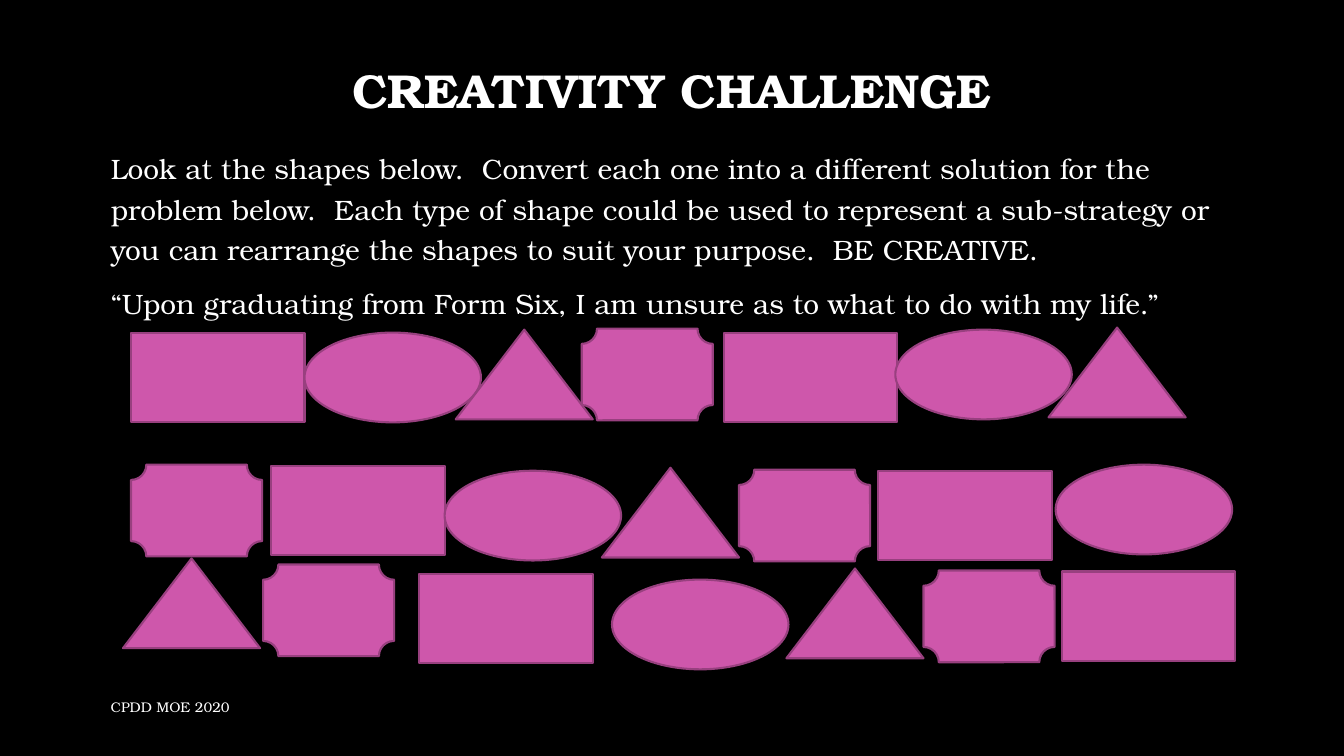
from itertools import cycle

from pptx import Presentation
from pptx import util as u
from pptx.dml.color import RGBColor
from pptx.enum import shapes, text

BLACK = RGBColor(0x00, 0x00, 0x00)
WHITE = RGBColor(0xFF, 0xFF, 0xFF)
PINK = RGBColor(0xCE, 0x57, 0xAB)
PLUM = RGBColor(0x98, 0x40, 0x7F)

# The four shapes repeat in this order along the rows: kind, width, height
KINDS = [
    (shapes.MSO_SHAPE.RECTANGLE, 1.72, 0.89),
    (shapes.MSO_SHAPE.OVAL, 1.75, 0.89),
    (shapes.MSO_SHAPE.ISOSCELES_TRIANGLE, 1.36, 0.89),
    (shapes.MSO_SHAPE.PLAQUE, 1.3, 0.91),
]

# Hand-scattered left and top of each shape, row by row
ROWS = [
    [(1.3, 3.3), (3.02, 3.3), (4.52, 3.27), (5.77, 3.26),
     (7.18, 3.3), (8.88, 3.27), (10.4, 3.25)],
    [(1.3, 4.61), (2.69, 4.62), (4.41, 4.67), (5.97, 4.64),
     (7.33, 4.66), (8.71, 4.67), (10.47, 4.61)],
    [(1.22, 5.54), (2.61, 5.6), (4.16, 5.69), (6.07, 5.75),
     (7.8, 5.64), (9.16, 5.66), (10.53, 5.67)],
]


class ChallengeSlide:
    font = "TeX Gyre Bonum"

    def __init__(self, deck):
        self.slide = deck.slides.add_slide(deck.slide_layouts[6])
        fill = self.slide.background.fill
        fill.solid()
        fill.fore_color.rgb = BLACK

    def add_text(self, lines, left, top, width, height, *, size, bold=False,
                 align=text.PP_ALIGN.LEFT, anchor=text.MSO_ANCHOR.MIDDLE,
                 spacing=1.0, before=0):
        box = self.slide.shapes.add_textbox(
            u.Inches(left), u.Inches(top), u.Inches(width), u.Inches(height))
        frame = box.text_frame
        frame.word_wrap = True
        frame.vertical_anchor = anchor
        frame.text = "\n".join(lines)
        for para in frame.paragraphs:
            para.alignment = align
            para.line_spacing = spacing
            para.space_before = u.Pt(before)
            for span in para.runs:
                span.font.name = self.font
                span.font.size = u.Pt(size)
                span.font.bold = bold
                span.font.color.rgb = WHITE

    def add_figure(self, kind, left, top, width, height):
        figure = self.slide.shapes.add_shape(
            kind, u.Inches(left), u.Inches(top), u.Inches(width), u.Inches(height))
        figure.shadow.inherit = False
        figure.fill.solid()
        figure.fill.fore_color.rgb = PINK
        figure.line.color.rgb = PLUM
        figure.line.width = u.Pt(1.5)


def main():
    deck = Presentation()
    deck.slide_width = u.Inches(13.33)
    deck.slide_height = u.Inches(7.5)
    page = ChallengeSlide(deck)

    # Title, task and footer
    page.add_text(["CREATIVITY CHALLENGE"], 1, 0.44, 11.32, 0.96, size=34,
                  bold=True, align=text.PP_ALIGN.CENTER, spacing=0.9)
    page.add_text(
        ["Look at the shapes below.  Convert each one into a different solution "
         "for the problem below.  Each type of shape could be used to represent "
         "a sub-strategy or you can rearrange the shapes to suit your purpose.  "
         "BE CREATIVE.",
         "“Upon graduating from Form Six, I am unsure as to what to do with my life.”"],
        1, 1.39, 11.32, 5.3, size=20, anchor=text.MSO_ANCHOR.TOP,
        spacing=1.2, before=10)
    page.add_text(["CPDD MOE 2020"], 1, 6.81, 7.3, 0.4, size=10)

    # Shapes to work with
    kinds = cycle(KINDS)
    for row in ROWS:
        for left, top in row:
            kind, width, height = next(kinds)
            page.add_figure(kind, left, top, width, height)

    deck.save("out.pptx")


if __name__ == "__main__":
    main()
